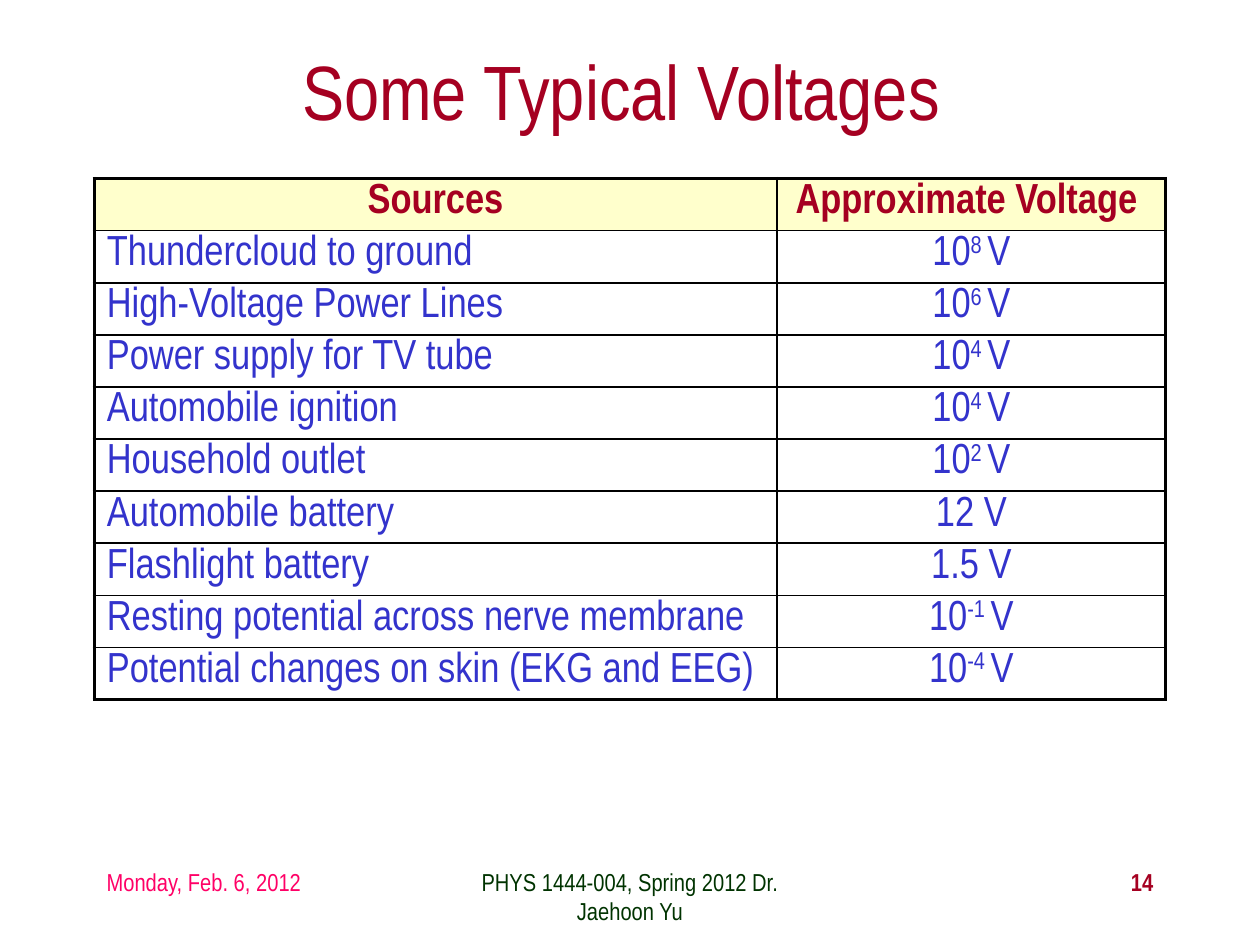
from lxml.etree import SubElement
from pptx import Presentation
from pptx.dml.color import RGBColor as RGB
from pptx.enum.text import MSO_ANCHOR as ANCHOR, PP_ALIGN as ALIGN
from pptx.oxml.ns import qn
from pptx.util import Cm, Pt

FONT = "Arial Narrow"
COLORS = {
    "heading": "A50021",
    "body": "3333CC",
    "header_fill": "FFFFCC",
    "date": "FF0066",
    "footer": "003300",
    "border": "000000",
}
HEADERS = ("Sources", "Approximate Voltage ")
VOLTAGES = [
    ("Thundercloud to ground", ("10", "8 ", "V")),
    ("High-Voltage Power Lines", ("10", "6 ", "V")),
    ("Power supply for TV tube", ("10", "4 ", "V")),
    ("Automobile ignition", ("10", "4 ", "V")),
    ("Household outlet", ("10", "2 ", "V")),
    ("Automobile battery", ("12 V",)),
    ("Flashlight battery", ("1.5 V",)),
    ("Resting potential across nerve membrane", ("10", "-1 ", "V")),
    ("Potential changes on skin (EKG and EEG)", ("10", "-4 ", "V")),
]


def write(p, parts, size, color, align=ALIGN.LEFT, bold=False):
    p.alignment = align
    for i, part in enumerate(parts):
        r = p.add_run()
        r.text = part
        r.font.name = FONT
        r.font.size = Pt(size)
        r.font.bold = bold
        r.font.color.rgb = RGB.from_string(COLORS[color])
        if i == 1:
            r._r.get_or_add_rPr().set("baseline", "30000")


def set_borders(cell, widths):
    tc_pr = cell._tc.get_or_add_tcPr()
    for i, (side, width) in enumerate(zip(("lnL", "lnR", "lnT", "lnB"), widths)):
        ln = SubElement(tc_pr, qn(f"a:{side}"), w=str(Pt(width)))
        fill = SubElement(ln, qn("a:solidFill"))
        SubElement(fill, qn("a:srgbClr"), val=COLORS["border"])
        tc_pr.remove(ln)
        tc_pr.insert(i, ln)


def add_title(slide, left, top, width, height):
    sp = slide.shapes.title
    sp.left, sp.top, sp.width, sp.height = Cm(left), Cm(top), Cm(width), Cm(height)
    tf = sp.text_frame
    tf.vertical_anchor = ANCHOR.MIDDLE
    write(tf.paragraphs[0], ("Some Typical Voltages ",), 44, "heading", ALIGN.CENTER)


def add_voltage_table(slide, left, top, width, row_height):
    rows = [(HEADERS[0], (HEADERS[1],))] + VOLTAGES
    last = len(rows) - 1
    frame = slide.shapes.add_table(len(rows), 2, Cm(left), Cm(top),
                                   Cm(width), Cm(row_height * len(rows)))
    table = frame.table
    source_width = 13.76
    table.columns[0].width = Cm(source_width)
    table.columns[1].width = Cm(width - source_width)
    for i, (source, voltage) in enumerate(rows):
        table.rows[i].height = Cm(row_height)
        header = i == 0
        for j, parts in enumerate(((source,), voltage)):
            cell = table.cell(i, j)
            cell.vertical_anchor = ANCHOR.MIDDLE
            cell.margin_top, cell.margin_bottom = 0, Cm(0.08)
            if header:
                cell.fill.solid()
                cell.fill.fore_color.rgb = RGB.from_string(COLORS["header_fill"])
            else:
                cell.fill.background()
            outer = (j == 0, j == 1, header, i == last)
            set_borders(cell, [2.25 if edge else 1 for edge in outer])
            write(cell.text_frame.paragraphs[0], parts, 24,
                  "heading" if header else "body",
                  ALIGN.CENTER if header or j else ALIGN.LEFT, header)


def add_footer(slide, left, top, width, height):
    items = [
        (0, 5.92, "Monday, Feb. 6, 2012", "date", ALIGN.LEFT, False),
        (6.78, 8.04, "PHYS 1444-004, Spring 2012 Dr. Jaehoon Yu", "footer",
         ALIGN.CENTER, False),
        (width - 5.29, 5.29, "14", "heading", ALIGN.RIGHT, True),
    ]
    for x, w, text, color, align, bold in items:
        sp = slide.shapes.add_textbox(Cm(left + x), Cm(top), Cm(w), Cm(height))
        tf = sp.text_frame
        tf.word_wrap = True
        write(tf.paragraphs[0], (text,), 14, color, align, bold)


def main():
    prs = Presentation()
    prs.slide_width, prs.slide_height = Cm(25.4), Cm(19.05)
    slide = prs.slides.add_slide(prs.slide_layouts[5])
    left, width = 1.9, 21.6
    add_title(slide, left, 0.85, width, 1.9)
    add_voltage_table(slide, left, 3.6, width, 1.05)
    add_footer(slide, left, 17.35, width, 1.27)
    prs.save("out.pptx")


if __name__ == "__main__":
    main()
